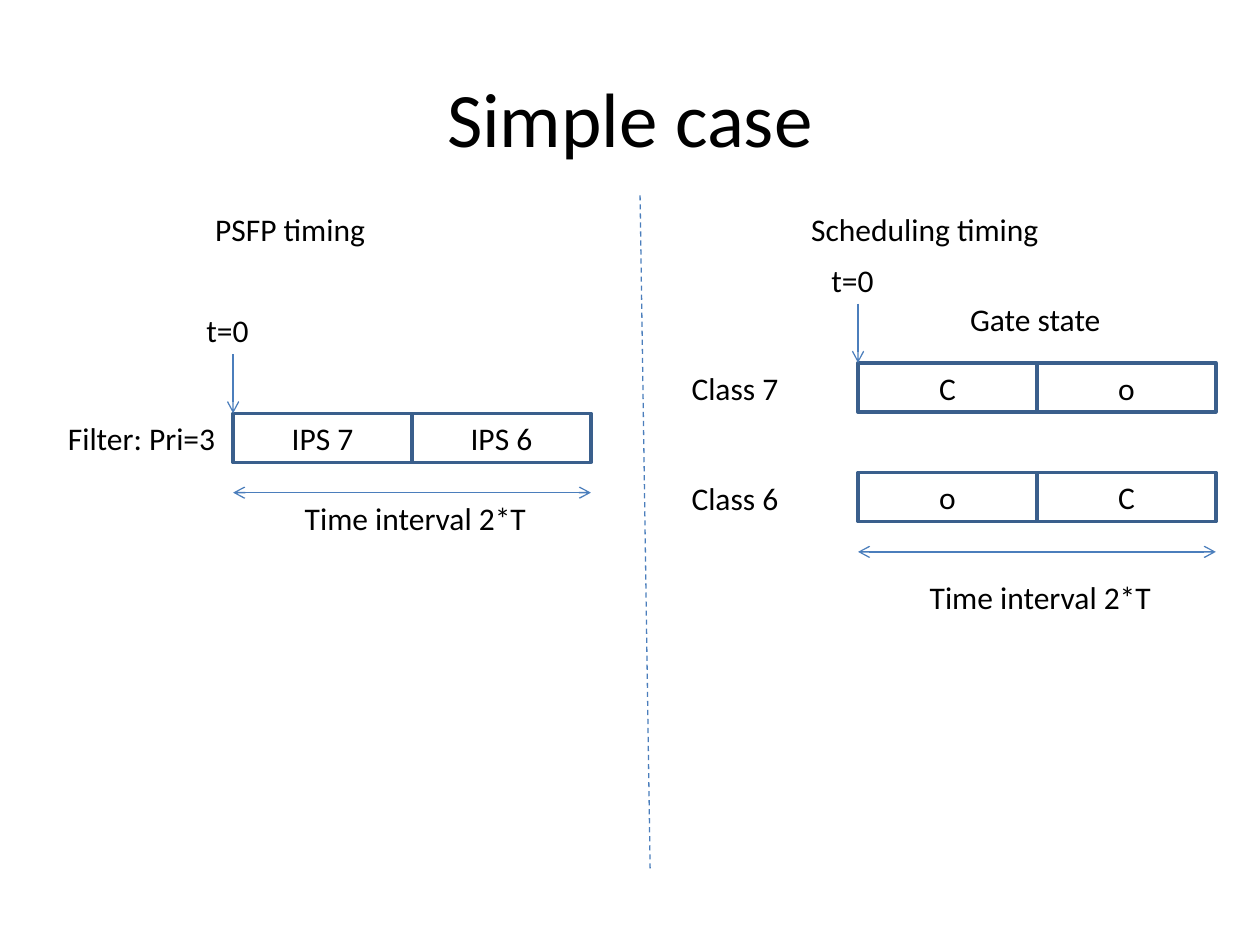
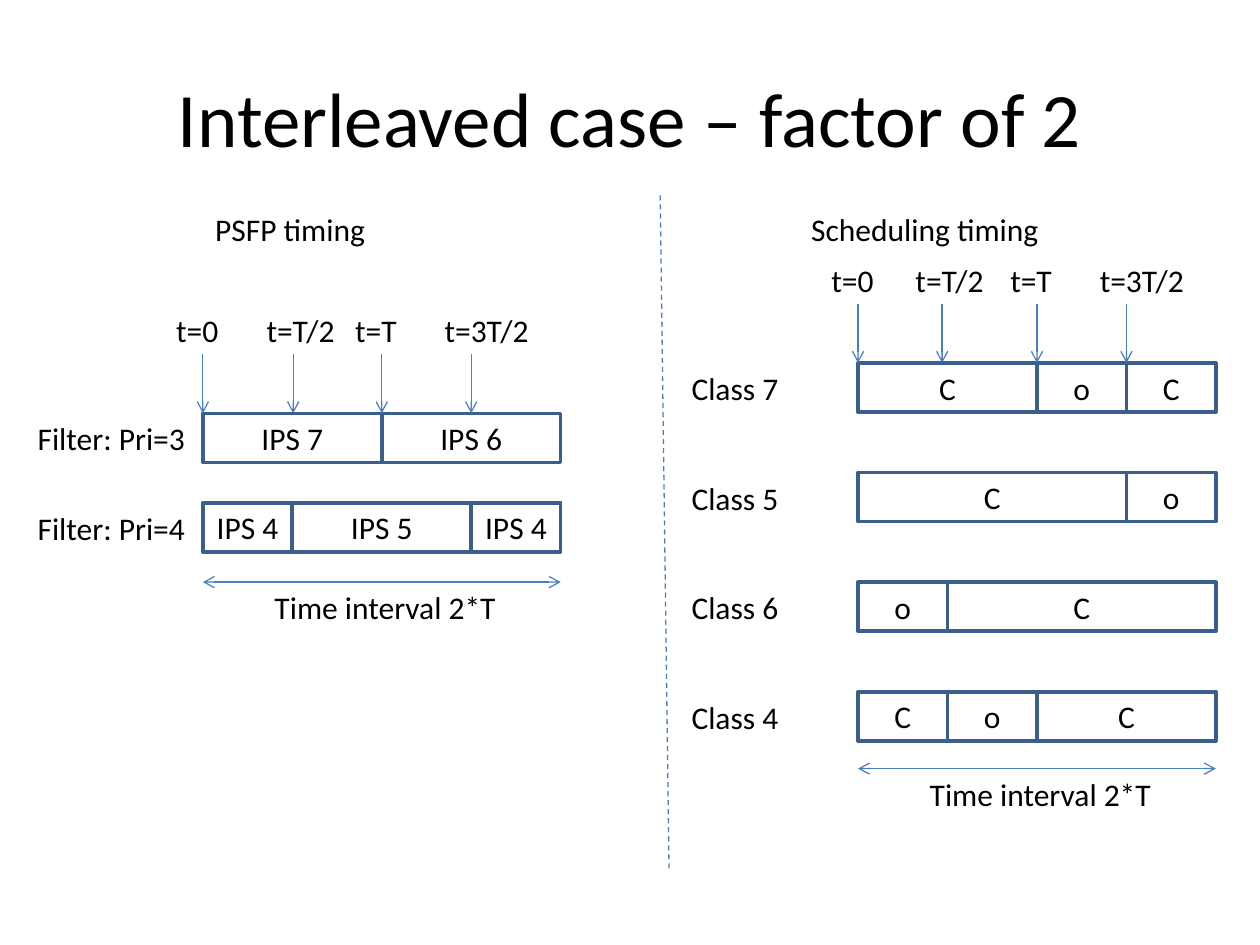
from lxml import etree
from pptx import Presentation
from pptx.dml.color import RGBColor
from pptx.enum.dml import MSO_LINE
from pptx.enum.shapes import MSO_CONNECTOR, MSO_SHAPE
from pptx.enum.text import MSO_ANCHOR, PP_ALIGN
from pptx.oxml.ns import qn
from pptx.util import Inches, Pt

BLACK = RGBColor(0x00, 0x00, 0x00)
WHITE = RGBColor(0xFF, 0xFF, 0xFF)
CELL_BORDER = RGBColor(0x3A, 0x5F, 0x8C)
LINE_BLUE = RGBColor(0x4B, 0x7E, 0xBC)

DASH = MSO_LINE.DASH
STRAIGHT = MSO_CONNECTOR.STRAIGHT
RECTANGLE = MSO_SHAPE.RECTANGLE
LEFT, CENTER = PP_ALIGN.LEFT, PP_ALIGN.CENTER
TOP, MIDDLE = MSO_ANCHOR.TOP, MSO_ANCHOR.MIDDLE

FONT = "Calibri"
TITLE_ONLY = 5
QUARTER = 0.71  # width of T/2
INTERVAL = 4 * QUARTER
CELL_HEIGHT = 0.39
LABEL_HEIGHT = 0.4
MARKER_RISE = 0.86
MARKER_ARROW = 0.47
SCHEDULE_LEFT, SCHEDULE_TOP, SCHEDULE_STEP = 6.81, 2.88, 0.87
FILTER_TOP, FILTER_STEP = 3.28, 0.71
FILTER_LABEL_GAP = 1.41
CLASS_LABEL_GAP = 1.42

LABEL_WIDTHS = {
    "PSFP timing": 1.4, "Scheduling timing": 2.03, "Gate state": 1.25,
    "Time interval 2*T": 1.98, "t=0": 0.54, "t=T": 0.54, "t=T/2": 0.75,
    "t=3T/2": 0.88, "Filter: Pri=3": 1.38, "Filter: Pri=4": 1.38,
    "Class 4": 0.9, "Class 5": 0.9, "Class 6": 0.9, "Class 7": 0.9,
}


class TimingDeck:
    def __init__(self):
        self.deck = Presentation()
        self.deck.slide_width = Inches(10)
        self.deck.slide_height = Inches(7.5)
        self.page = None

    def set_text(self, frame, text, size=18, align=LEFT, anchor=TOP):
        frame.word_wrap = False
        frame.vertical_anchor = anchor
        para = frame.paragraphs[0]
        para.text = text
        para.alignment = align
        para.font.name = FONT
        para.font.size = Pt(size)
        para.font.color.rgb = BLACK

    def add_page(self, title, divider_top_x, divider_bottom_x):
        """Start a slide with its title, dashed divider and two headings."""
        self.page = self.deck.slides.add_slide(self.deck.slide_layouts[TITLE_ONLY])
        box = self.page.shapes.title
        box.left, box.top = Inches(0.5), Inches(0.3)
        box.width, box.height = Inches(9), Inches(1.25)
        self.set_text(box.text_frame, title, 44, CENTER, MIDDLE)
        self.line(divider_top_x, 1.55, divider_bottom_x, 6.9, dashed=True)
        self.label("PSFP timing", 1.61, 1.62)
        self.label("Scheduling timing", 6.34, 1.62)

    def label(self, text, left, top):
        box = self.page.shapes.add_textbox(
            Inches(left), Inches(top), Inches(LABEL_WIDTHS[text]), Inches(LABEL_HEIGHT))
        self.set_text(box.text_frame, text)

    def cell(self, text, left, top, width):
        box = self.page.shapes.add_shape(
            RECTANGLE, Inches(left), Inches(top), Inches(width), Inches(CELL_HEIGHT))
        box.shadow.inherit = False
        box.fill.solid()
        box.fill.fore_color.rgb = WHITE
        box.line.color.rgb = CELL_BORDER
        box.line.width = Pt(2)
        self.set_text(box.text_frame, text, align=CENTER, anchor=MIDDLE)

    def line(self, x1, y1, x2, y2, dashed=False, arrows=()):
        """Draw a thin line; arrows names the ends (headEnd, tailEnd) that get one."""
        connector = self.page.shapes.add_connector(
            STRAIGHT, Inches(x1), Inches(y1), Inches(x2), Inches(y2))
        connector.line.color.rgb = LINE_BLUE
        connector.line.width = Pt(0.75)
        if dashed:
            connector.line.dash_style = DASH
        properties = connector._element.spPr
        outline = properties.find(qn("a:ln"))
        for end in arrows:
            etree.SubElement(outline, qn(f"a:{end}"), type="arrow")
        etree.SubElement(properties, qn("a:effectLst"))

    def rows(self, left, top, step, label_gap, rows):
        """Stack labelled bars whose cells are (text, number of quarters)."""
        for index, (name, cells) in enumerate(rows):
            row_top = top + index * step
            self.label(name, left - label_gap, row_top)
            cell_left = left
            for text, quarters in cells:
                self.cell(text, cell_left, row_top, quarters * QUARTER)
                cell_left += quarters * QUARTER

    def markers(self, left, bar_top, times):
        """Point at moments on the bar, given as (text, quarters from its start)."""
        for text, quarters in times:
            x = left + quarters * QUARTER
            self.line(x, bar_top - MARKER_ARROW, x, bar_top, arrows=["tailEnd"])
            self.label(text, x - 0.31, bar_top - MARKER_RISE)

    def interval(self, left, y, label_top):
        self.line(left, y, left + INTERVAL, y, arrows=["headEnd", "tailEnd"])
        self.label("Time interval 2*T", left + 0.47, label_top)

    def filters(self, left, rows, times, interval_y):
        self.rows(left, FILTER_TOP, FILTER_STEP, FILTER_LABEL_GAP, rows)
        self.markers(left, FILTER_TOP, times)
        self.interval(left, interval_y, interval_y)

    def schedule(self, rows, times, interval_y, label_top):
        self.rows(SCHEDULE_LEFT, SCHEDULE_TOP, SCHEDULE_STEP, CLASS_LABEL_GAP, rows)
        self.markers(SCHEDULE_LEFT, SCHEDULE_TOP, times)
        self.interval(SCHEDULE_LEFT, interval_y, label_top)


def main():
    timing = TimingDeck()
    start = [("t=0", 0)]
    priority_3 = ("Filter: Pri=3", [("IPS 7", 2), ("IPS 6", 2)])

    timing.add_page("Simple case", 5.08, 5.16)
    timing.filters(1.85, [priority_3], start, 3.91)
    timing.schedule([
        ("Class 7", [("C", 2), ("o", 2)]),
        ("Class 6", [("o", 2), ("C", 2)]),
    ], start, 4.38, 4.54)
    timing.label("Gate state", 7.6, 2.33)

    timing.add_page("Interleaved case – factor of 2", 5.24, 5.31)
    later = [("t=T", 2), ("t=3T/2", 3)]
    priority_4 = ("Filter: Pri=4", [("IPS 4", 1), ("IPS 5", 2), ("IPS 4", 1)])
    timing.filters(1.61, [priority_3, priority_4], start + [("t=T/2", 1.01)] + later, 4.62)
    timing.schedule([
        ("Class 7", [("C", 2), ("o", 1), ("C", 1)]),
        ("Class 5", [("C", 3), ("o", 1)]),
        ("Class 6", [("o", 1), ("C", 3)]),
        ("Class 4", [("C", 1), ("o", 1), ("C", 2)]),
    ], start + [("t=T/2", 0.94)] + later, 6.1, 6.1)

    timing.deck.save("out.pptx")


if __name__ == "__main__":
    main()
